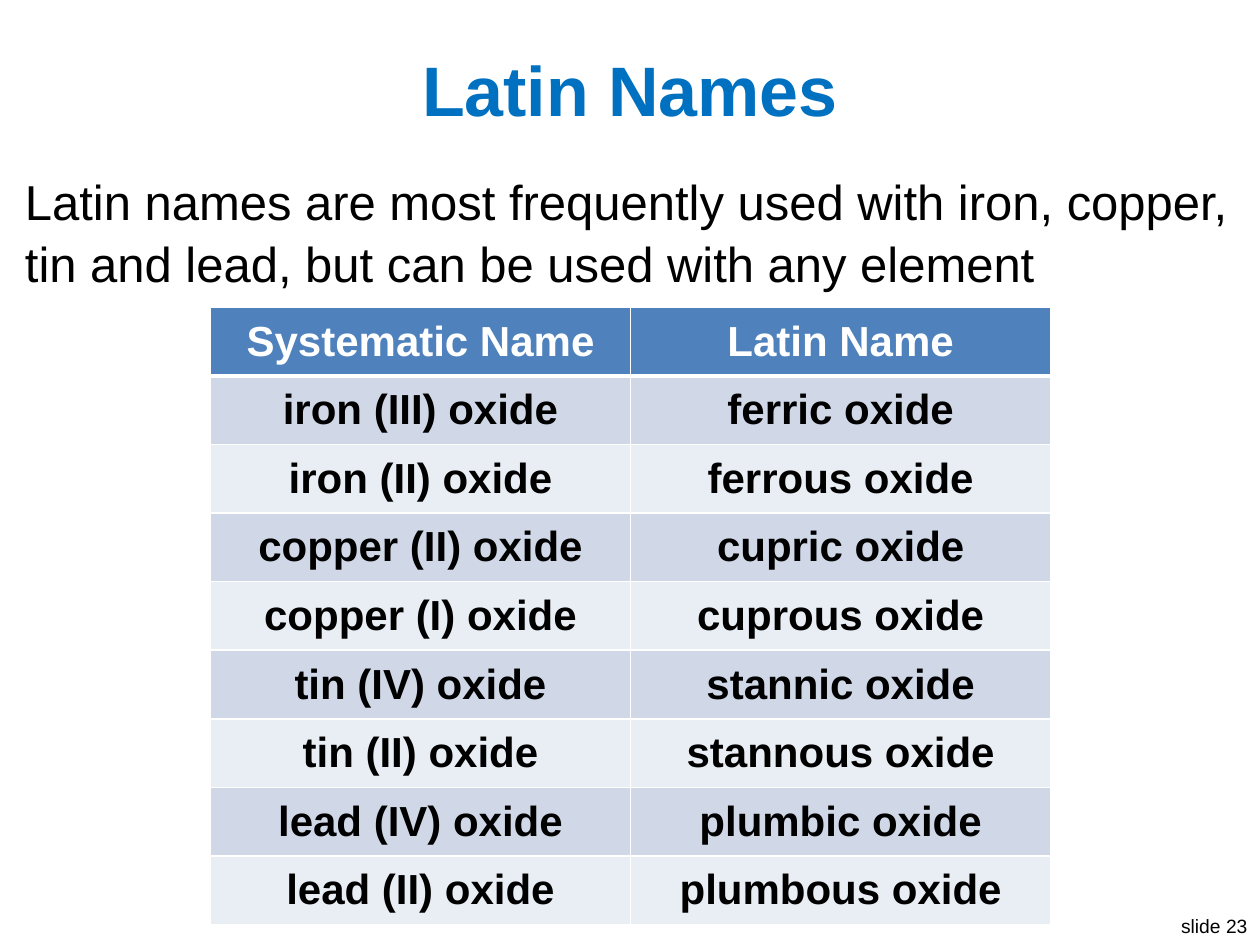
from lxml.etree import SubElement
from pptx import Presentation
from pptx.dml.color import RGBColor
from pptx.enum.text import MSO_ANCHOR, PP_ALIGN
from pptx.oxml.ns import qn
from pptx.util import Pt

PX = 9144
FONT = "Arial"
COLORS = {
    "title": "0070C0",
    "text": "000000",
    "header": "4F81BD",
    "header_text": "FFFFFF",
    "border": "FFFFFF",
    "band_dark": "D0D8E8",
    "band_light": "E9EDF4",
}
NAMES = [
    ("Systematic Name", "Latin Name"),
    ("iron (III) oxide", "ferric oxide"),
    ("iron (II) oxide", "ferrous oxide"),
    ("copper (II) oxide", "cupric oxide"),
    ("copper (I) oxide", "cuprous oxide"),
    ("tin (IV) oxide", "stannic oxide"),
    ("tin (II) oxide", "stannous oxide"),
    ("lead (IV) oxide", "plumbic oxide"),
    ("lead (II) oxide", "plumbous oxide"),
]


def emu(box):
    """Turn a box in px into EMU."""
    return [length * PX for length in box]


def write(frame, text, size, color, align, bold=False):
    """Put one styled paragraph into a text frame and return it."""
    frame.text = text
    para = frame.paragraphs[0]
    para.alignment = align
    font = para.runs[0].font
    font.name, font.size, font.bold = FONT, Pt(size), bold
    font.color.rgb = RGBColor.from_string(COLORS[color])
    return para


def add_frame(page, box, wrap=True):
    """Add a text box and return its text frame."""
    frame = page.shapes.add_textbox(*emu(box)).text_frame
    frame.word_wrap = wrap
    return frame


def add_title(page, box):
    """Add the centred heading."""
    frame = add_frame(page, box)
    frame.vertical_anchor = MSO_ANCHOR.MIDDLE
    write(frame, "Latin Names", 40, "title", PP_ALIGN.CENTER, True)


def add_statement(page, box):
    """Add the sentence above the table."""
    text = ("Latin names are most frequently used with iron, copper, "
            "tin and lead, but can be used with any element")
    para = write(add_frame(page, box), text, 28, "text", PP_ALIGN.LEFT)
    para.space_before = Pt(12)
    para.line_spacing = 1.05


def add_slide_number(page, box):
    """Add the slide number at the lower right."""
    write(add_frame(page, box, False), "slide 23", 11, "text", PP_ALIGN.RIGHT)


def set_borders(cell, widths):
    """Draw the cell borders with the given widths in points."""
    properties = cell._tc.get_or_add_tcPr()
    for side, width in widths.items():
        line = SubElement(properties, qn(f"a:ln{side}"), w=str(Pt(width)))
        fill = SubElement(line, qn("a:solidFill"))
        SubElement(fill, qn("a:srgbClr"), val=COLORS["border"])


def add_name_table(page, box):
    """Add the table of systematic and Latin names."""
    table = page.shapes.add_table(len(NAMES), len(NAMES[0]), *emu(box)).table
    for row, names in enumerate(NAMES):
        header = row == 0
        band = "header" if header else ("band_light", "band_dark")[row % 2]
        widths = {"L": 1, "R": 1, "T": 3 if row == 1 else 1, "B": 3 if header else 1}
        for column, name in enumerate(names):
            cell = table.cell(row, column)
            set_borders(cell, widths)
            cell.fill.solid()
            cell.fill.fore_color.rgb = RGBColor.from_string(COLORS[band])
            cell.vertical_anchor = MSO_ANCHOR.MIDDLE
            color = "header_text" if header else "text"
            write(cell.text_frame, name, 24, color, PP_ALIGN.CENTER, True)


def main():
    """Build the deck and save it."""
    deck = Presentation()
    deck.slide_width, deck.slide_height = emu((1000, 750))
    page = deck.slides.add_slide(deck.slide_layouts[6])
    add_slide_number(page, (925, 721, 75, 29))
    add_title(page, (20, 30, 960, 80))
    add_statement(page, (10, 129, 980, 110))
    add_name_table(page, (167, 244, 667, 490))
    deck.save("out.pptx")


if __name__ == "__main__":
    main()
